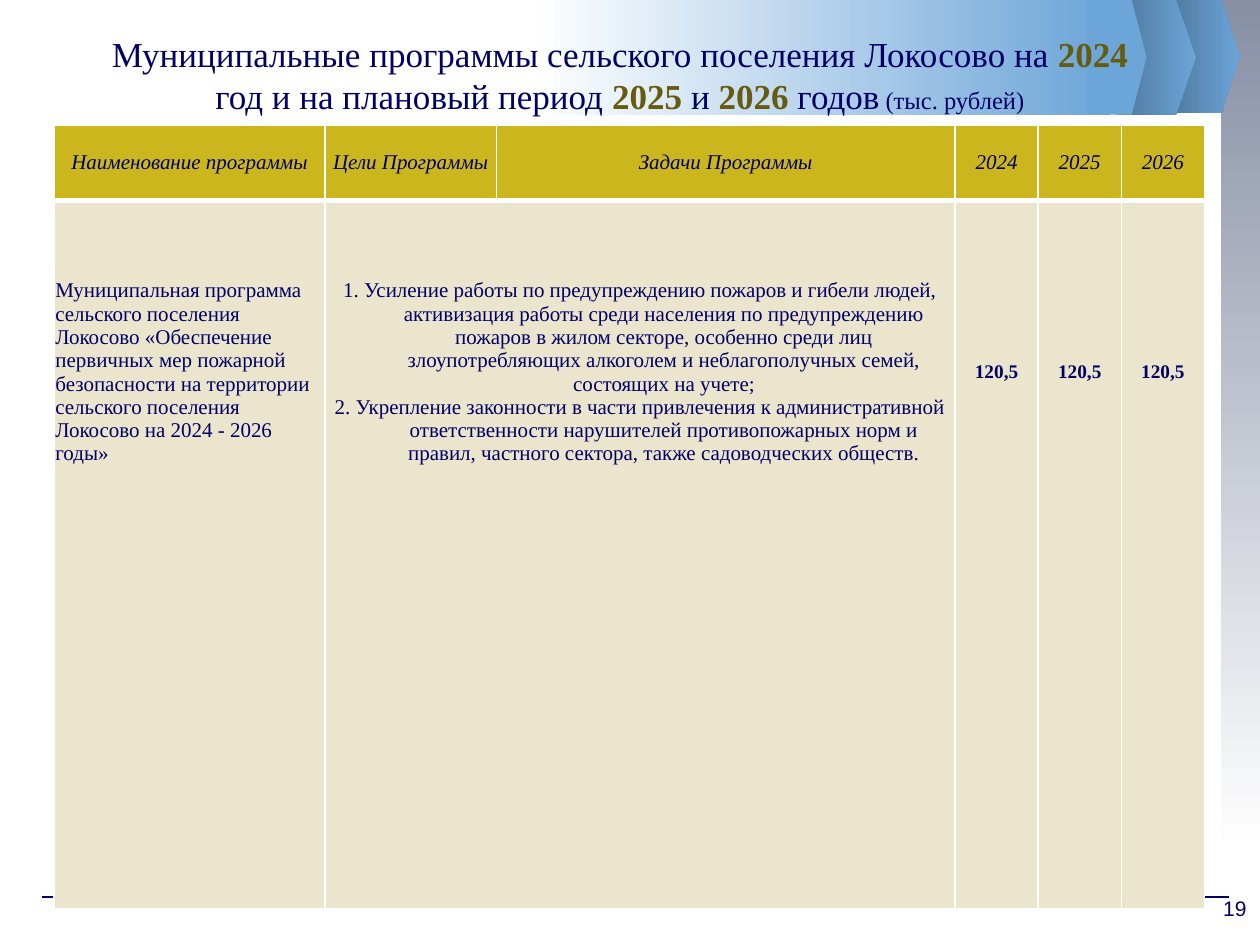
from lxml import etree
from pptx import Presentation
from pptx.dml.color import RGBColor
from pptx.enum import shapes, text
from pptx.oxml import ns
from pptx.util import Inches, Pt

COLORS = {
    "navy": "000066", "olive": "665B0F", "gold": "CBB61D", "sand": "ECE5CD",
    "white": "FFFFFF", "gray": "878FA5", "steel": "4D769B", "sky": "6CA5D8",
}
SERIF, SANS = "Times New Roman", "Arial"
RECT = shapes.MSO_SHAPE.RECTANGLE
ARROW = shapes.MSO_SHAPE.PENTAGON
CENTER, LEFT = text.PP_ALIGN.CENTER, text.PP_ALIGN.LEFT


def rgb(name):
    return RGBColor.from_string(COLORS[name])


def style(font, size, color="navy", face=SERIF, bold=False, italic=False):
    font.name, font.size, font.bold, font.italic = face, Pt(size), bold, italic
    font.color.rgb = rgb(color)


def border(cell, bottom):
    """Draw white edges, one point wide except for the bottom one."""
    props = cell._tc.get_or_add_tcPr()
    for i, (side, width) in enumerate(zip("LRTB", (1, 1, 1, bottom))):
        edge = etree.Element(ns.qn(f"a:ln{side}"), w=str(Pt(width)))
        fill = etree.SubElement(edge, ns.qn("a:solidFill"))
        etree.SubElement(fill, ns.qn("a:srgbClr"), val=COLORS["white"])
        props.insert(i, edge)


class Deck:
    def __init__(self):
        self.prs = Presentation()
        self.prs.slide_width, self.prs.slide_height = Inches(10), Inches(7.5)
        self.slide = self.prs.slides.add_slide(self.prs.slide_layouts[5])
        self.shapes = self.slide.shapes

    def block(self, kind, box, first, last, angle=0):
        shape = self.shapes.add_shape(kind, *map(Inches, box))
        shape.shadow.inherit = False
        shape.line.fill.background()
        if kind == ARROW:
            shape.adjustments[0] = 0.25
        if first == last:
            shape.fill.solid()
            shape.fill.fore_color.rgb = rgb(first)
            return
        shape.fill.gradient()
        shape.fill.gradient_angle = angle
        for stop, name in zip(shape.fill.gradient_stops, (first, last)):
            stop.color.rgb = rgb(name)

    def rule(self, left, right, top):
        line = self.shapes.add_connector(
            shapes.MSO_CONNECTOR.STRAIGHT,
            Inches(left), Inches(top), Inches(right), Inches(top))
        line.line.color.rgb = rgb("navy")
        line.line.width = Pt(0.75)
        etree.SubElement(line._element.spPr, ns.qn("a:effectLst"))

    def title(self, box, runs):
        title = self.shapes.title
        title.left, title.top, title.width, title.height = map(Inches, box)
        title._element.getparent().append(title._element)
        frame = title.text_frame
        frame.word_wrap = True
        frame.auto_size = text.MSO_AUTO_SIZE.NONE
        frame.vertical_anchor = text.MSO_ANCHOR.TOP
        par = frame.paragraphs[0]
        par.alignment = CENTER
        for words, size, color in runs:
            run = par.add_run()
            run.text = words
            style(run.font, size, color, bold=color == "olive")

    def label(self, box, words):
        frame = self.shapes.add_textbox(*map(Inches, box)).text_frame
        frame.word_wrap = False
        frame.text = words
        style(frame.paragraphs[0].font, 12, face=SANS)

    def grid(self, left, top, cols, rows):
        table = self.shapes.add_table(
            len(rows), len(cols), Inches(left), Inches(top),
            Inches(sum(cols)), Inches(sum(rows))).table
        for col, width in zip(table.columns, cols):
            col.width = Inches(width)
        for row, height in zip(table.rows, rows):
            row.height = Inches(height)
        return table

    def cell(self, cell, lines, fill, pad=(0, 0), align=CENTER, hang=0,
             edge=1, **font):
        """Fill one cell; pad is the side and the bottom margin."""
        side, bottom = pad
        cell.margin_left = cell.margin_right = cell.margin_top = Inches(side)
        cell.margin_bottom = Inches(bottom)
        cell.vertical_anchor = text.MSO_ANCHOR.MIDDLE
        cell.fill.solid()
        cell.fill.fore_color.rgb = rgb(fill)
        border(cell, edge)
        cell.text = "\n".join(lines)
        for par in cell.text_frame.paragraphs:
            par.alignment = align
            style(par.font, **font)
            if hang:
                props = par._p.get_or_add_pPr()
                props.set("marL", str(Inches(hang)))
                props.set("indent", str(-Inches(hang)))


HEADS = ["Наименование программы", "Цели Программы", "Задачи Программы",
         "2024", "2025", "2026"]
NAME = ("Муниципальная программа сельского поселения Локосово «Обеспечение "
        "первичных мер пожарной безопасности на территории сельского "
        "поселения Локосово на 2024 - 2026 годы»")
TASKS = [
    "1. Усиление работы по предупреждению пожаров и гибели людей, "
    "активизация работы среди населения по предупреждению пожаров в жилом "
    "секторе, особенно среди лиц злоупотребляющих алкоголем и "
    "неблагополучных семей, состоящих на учете;",
    "2. Укрепление законности в части привлечения к административной "
    "ответственности нарушителей противопожарных норм и правил, частного "
    "сектора, также садоводческих обществ.",
]
SUMS = ["120,5", "120,5", "120,5"]


def main():
    deck = Deck()
    deck.block(RECT, (9.69, 0, 0.31, 6.77), "gray", "white", 270)
    deck.rule(0.33, 9.75, 7.12)
    deck.block(ARROW, (9.25, -0.01, 0.59, 0.91), "steel", "sky")
    deck.block(ARROW, (8.86, 0, 0.63, 0.91), "steel", "sky")
    deck.block(RECT, (4.21, 0, 4.6, 0.91), "white", "sky")
    deck.block(ARROW, (8.63, 0, 0.47, 0.91), "sky", "sky")

    table = deck.grid(0.43, 0.99, [2.15, 1.36, 3.64] + [0.66] * 3, [0.6, 5.62])
    for i, head in enumerate(HEADS):
        deck.cell(table.cell(0, i), [head], "gold", edge=3, size=12, italic=True)
    pad = (0.01, 2.9)
    deck.cell(table.cell(1, 0), [NAME], "sand", pad, LEFT, size=12)
    tasks = table.cell(1, 1)
    tasks.merge(table.cell(1, 2))
    deck.cell(tasks, TASKS, "sand", pad, hang=0.38, size=12)
    for i, value in enumerate(SUMS, 3):
        deck.cell(table.cell(1, i), [value], "sand", pad, size=11, bold=True)

    deck.title((0.67, 0.21, 8.5, 0.77), [
        ("Муниципальные программы сельского поселения Локосово на ", 20, "navy"),
        ("2024", 20, "olive"),
        (" год и на плановый период ", 20, "navy"),
        ("2025", 20, "olive"),
        (" и ", 20, "navy"),
        ("2026", 20, "olive"),
        (" годов", 20, "navy"),
        (" (тыс. рублей)", 14, "navy"),
    ])
    deck.label((9.61, 7.06, 0.39, 0.3), "19")
    deck.prs.save("out.pptx")


if __name__ == "__main__":
    main()
